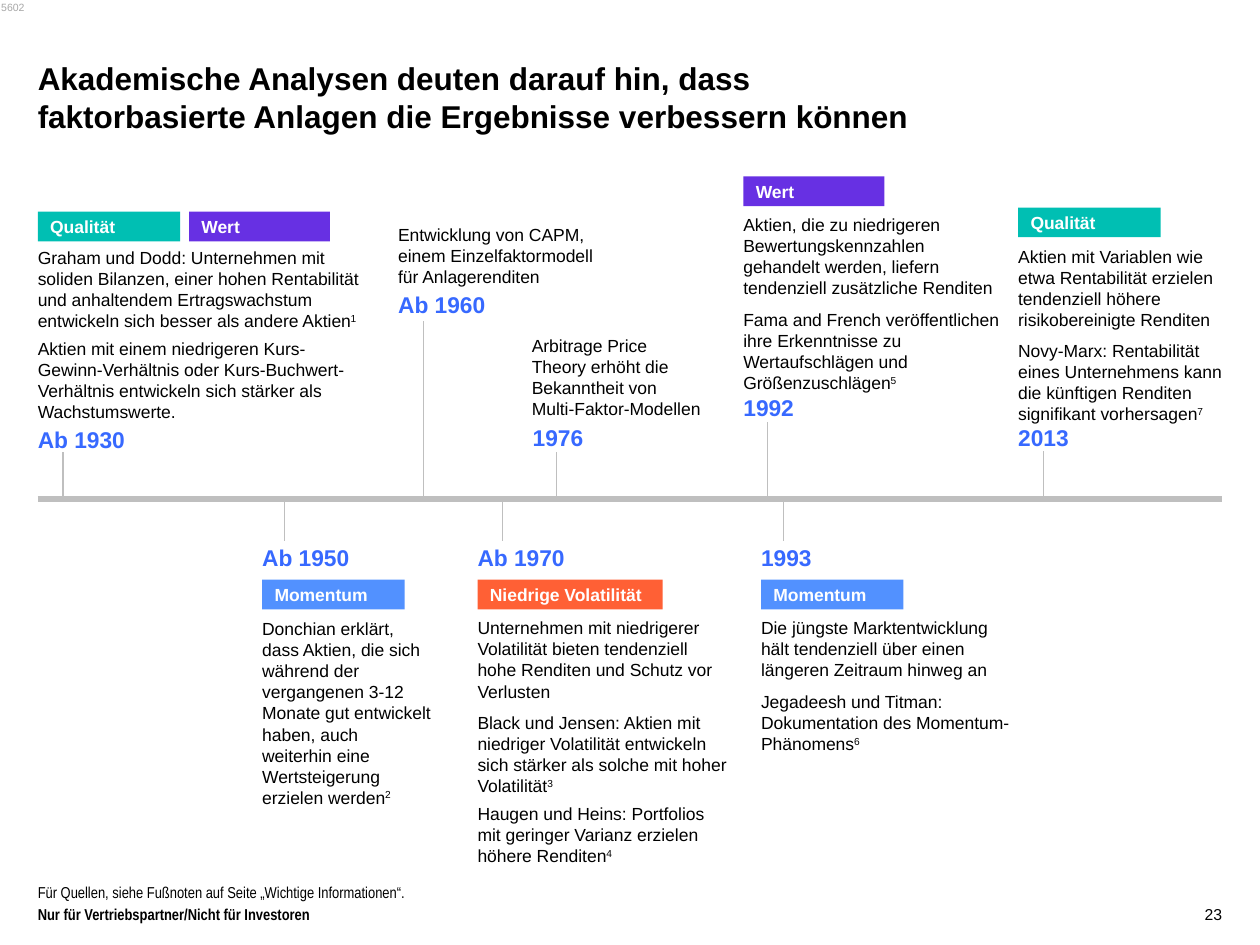
from pptx import Presentation
from pptx import util as u
from pptx.dml.color import RGBColor
from pptx.enum import shapes, text
from lxml import etree

NS = "http://schemas.openxmlformats.org/drawingml/2006/main"
BLACK, WHITE, GREY, BLUE = "000000", "FFFFFF", "BFBFBF", "3769FF"
TEAL, VIOLET, SKY, CORAL = "00BFB3", "6730E3", "5291FF", "FF6035"
TOP, MID, LOW = (text.MSO_ANCHOR.TOP, text.MSO_ANCHOR.MIDDLE,
                 text.MSO_ANCHOR.BOTTOM)
LEFT, RIGHT = 21.6, 698.4
AXIS = 285.1
BELOW = 309.6

DATES = [
    (LEFT, 242.3, "Ab 1930", 36, 258.5),
    (149.8, BELOW, "Ab 1950", 162.7, 308.9),
    (227.5, 164.9, "Ab 1960", 241.9, 183.6),
    (272.9, BELOW, "Ab 1970", 287.1, 308.9),
    (304.4, 241.2, "1976", 318.2, 258.5),
    (424.8, 223.9, "1992", 438.5, 241.2),
    (434.9, BELOW, "1993", 447.9, 308.9),
    (581.8, 241.2, "2013", 596.1, 257.8),
]

TAGS = [
    (LEFT, 121, 81.4, "Qualität", TEAL),
    (108, 121, 80.6, "Wert", VIOLET),
    (424.8, 100.8, 80.6, "Wert", VIOLET),
    (581.8, 118.6, 81.4, "Qualität", TEAL),
    (149.8, 331.2, 81.4, "Momentum", SKY),
    (272.9, 331.2, 105.8, "Niedrige Volatilität", CORAL),
    (434.9, 331.2, 81.4, "Momentum", SKY),
]

NOTES = [
    ((LEFT, 140.4, 187.9, 100.8), LOW, [
        ("Graham und Dodd: Unternehmen mit soliden Bilanzen, einer hohen "
         "Rentabilität und anhaltendem Ertragswachstum entwickeln sich "
         "besser als andere Aktien^1", 4),
        ("Aktien mit einem niedrigeren Kurs-Gewinn-Verhältnis oder "
         "Kurs-Buchwert-Verhältnis entwickeln sich stärker als "
         "Wachstumswerte.", 4)]),
    ((149.8, 352.8, 97.2, 108.7), LOW, [
        ("Donchian erklärt, dass Aktien, die sich während der vergangenen "
         "3-12 Monate gut entwickelt haben, auch weiterhin eine "
         "Wertsteigerung erzielen werden^2", 3)]),
    ((227.5, 128.2, 117.4, 36), TOP, [
        ("Entwicklung von CAPM, einem Einzelfaktormodell für "
         "Anlagerenditen", 0)]),
    ((272.9, 352.8, 144, 143.3), TOP, [
        ("Unternehmen mit niedrigerer Volatilität bieten tendenziell hohe "
         "Renditen und Schutz vor Verlusten", 6),
        ("Black und Jensen: Aktien mit niedriger Volatilität entwickeln "
         "sich stärker als solche mit hoher Volatilität^3", 4),
        ("Haugen und Heins: Portfolios mit geringer Varianz erzielen "
         "höhere Renditen^4", 4)]),
    ((303.9, 191.5, 97.9, 48.2), LOW, [
        ("Arbitrage Price Theory erhöht die Bekanntheit von "
         "Multi-Faktor-Modellen", 3)]),
    ((424.8, 122.4, 146.9, 103), TOP, [
        ("Aktien, die zu niedrigeren\vBewertungskennzahlen gehandelt "
         "werden, liefern tendenziell zusätzliche Renditen", 6),
        ("Fama and French veröffentlichen ihre Erkenntnisse zu "
         "Wertaufschlägen und Größenzuschlägen^5", 0)]),
    ((434.9, 352.8, 143.3, 78.5), TOP, [
        ("Die jüngste Marktentwicklung hält tendenziell über einen "
         "längeren Zeitraum hinweg an", 6),
        ("Jegadeesh und Titman: Dokumentation des "
         "Momentum-Phänomens^6", 4)]),
    ((581.8, 140.4, 116.6, 103), TOP, [
        ("Aktien mit Variablen wie etwa Rentabilität erzielen tendenziell "
         "höhere risikobereinigte Renditen", 6),
        ("Novy-Marx: Rentabilität eines Unternehmens kann die künftigen "
         "Renditen signifikant vorhersagen^7", 0)]),
]


def tint(hue):
    return RGBColor.from_string(hue)


def style(run, size, hue=BLACK, bold=False, face="Arial"):
    font = run.font
    font.size, font.bold, font.name = u.Pt(size), bold, face
    font.color.rgb = tint(hue)


def label(slide, rect, words, size, hue=BLACK, bold=False, face="Arial",
          anchor=TOP):
    box = slide.shapes.add_textbox(*map(u.Pt, rect))
    frame = box.text_frame
    frame.margin_left = frame.margin_right = 0
    frame.margin_top = frame.margin_bottom = 0
    frame.word_wrap, frame.vertical_anchor = True, anchor
    frame.text = words
    style(frame.paragraphs[0].runs[0], size, hue, bold, face)
    return frame.paragraphs[0]


def note(slide, rect, anchor, items):
    box = slide.shapes.add_textbox(*map(u.Pt, rect))
    frame = box.text_frame
    frame.margin_left = frame.margin_right = 0
    frame.margin_top = frame.margin_bottom = 0
    frame.word_wrap, frame.vertical_anchor = True, anchor
    for i, (words, after) in enumerate(items):
        para = frame.add_paragraph() if i else frame.paragraphs[0]
        body, _, mark = words.partition("^")
        para.text = body
        para.space_after = u.Pt(after)
        if mark:
            sup = para.add_run()
            sup.text = mark
            sup.font._element.set("baseline", "30000")
        for run in para.runs:
            style(run, 10)


def tag(slide, x, y, width, words, hue):
    box = slide.shapes.add_shape(shapes.MSO_SHAPE.RECTANGLE,
                                 *map(u.Pt, (x, y, width, 17)))
    box.shadow.inherit = False
    box.fill.solid()
    box.fill.fore_color.rgb = tint(hue)
    box.line.fill.background()
    frame = box.text_frame
    frame.vertical_anchor = MID
    frame.text = words
    para = frame.paragraphs[0]
    para.alignment = text.PP_ALIGN.LEFT
    style(para.runs[0], 10, WHITE, True)


def rule(slide, x1, y1, x2, y2, width):
    line = slide.shapes.add_connector(shapes.MSO_CONNECTOR.STRAIGHT,
                                      *map(u.Pt, (x1, y1, x2, y2)))
    line.line.color.rgb = tint(GREY)
    line.line.width = u.Pt(width)
    etree.SubElement(line._element.spPr, f"{{{NS}}}effectLst")


def main():
    deck = Presentation()
    deck.slide_width, deck.slide_height = u.Pt(720), u.Pt(540)
    slide = deck.slides.add_slide(deck.slide_layouts[6])

    label(slide, (LEFT, 33.8, 504, 50.4),
          "Akademische Analysen deuten darauf hin, dass "
          "faktorbasierte Anlagen die Ergebnisse verbessern können",
          18, bold=True)
    for x, y, date, stem, end in DATES:
        rule(slide, stem, AXIS, stem, end, 0.75)
        label(slide, (x, y, 61.2, 18), date, 13, BLUE, True, anchor=MID)
    rule(slide, LEFT, AXIS, RIGHT, AXIS, 3.75)
    for item in NOTES:
        note(slide, *item)
    for item in TAGS:
        tag(slide, *item)

    label(slide, (LEFT, 480.2, 669.6, 35.3),
          "Für Quellen, siehe Fußnoten auf Seite „Wichtige Informationen“.",
          9, face="Arial Narrow", anchor=LOW)
    foot = label(slide, (LEFT, 518.4, 648, 9.4),
                 "Nur für Vertriebspartner/Nicht für Investoren",
                 9, bold=True, face="Arial Narrow", anchor=LOW)
    foot.line_spacing = u.Pt(9)
    page = label(slide, (669.6, 514.8, 28.8, 13), "23", 9, anchor=LOW)
    page.alignment = text.PP_ALIGN.RIGHT
    label(slide, (0.7, 0.7, 20, 7.2), "5602", 6, "A7A7A7")
    deck.save("out.pptx")


if __name__ == "__main__":
    main()
